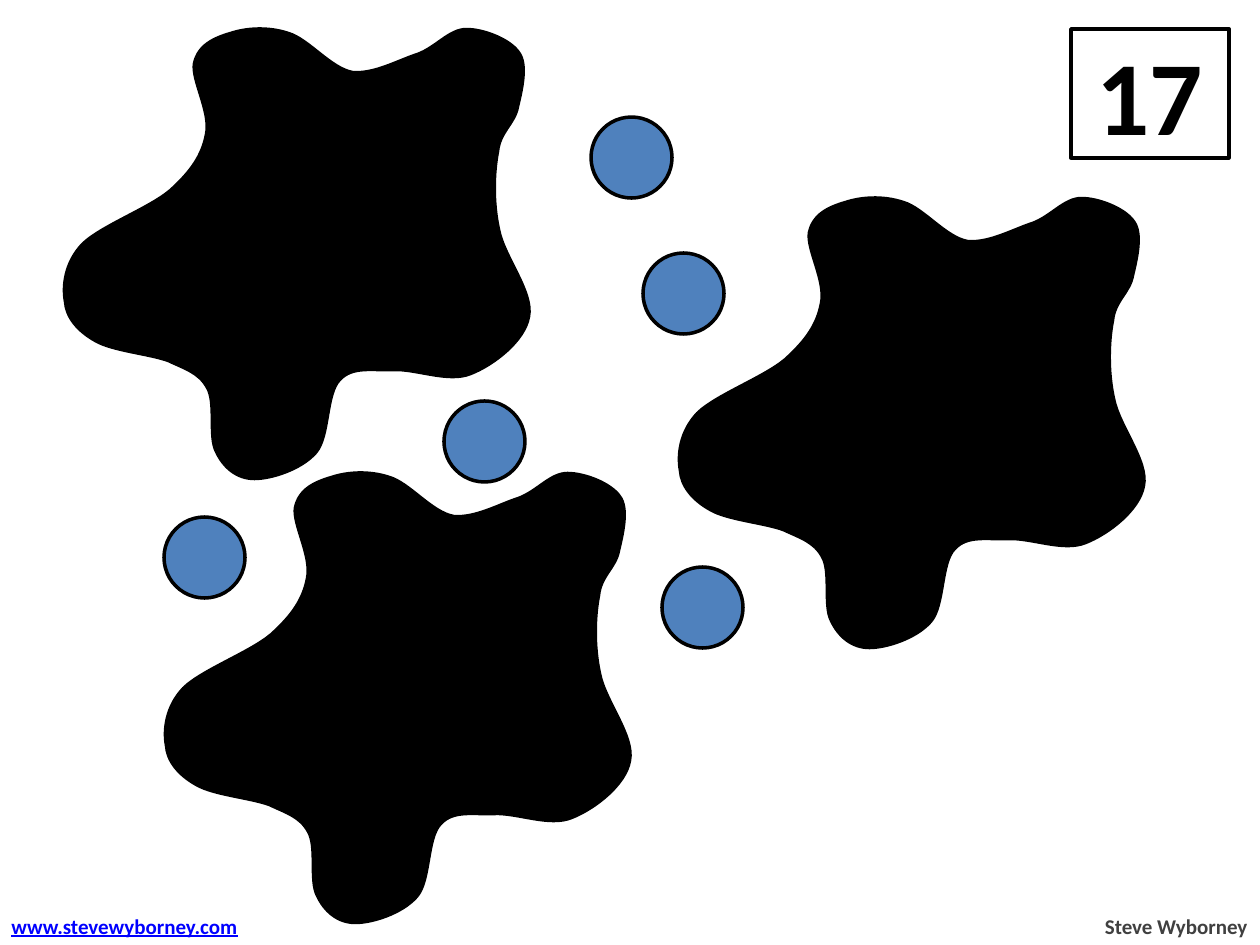
import pptx
import pptx.util
import pptx.dml.color
import pptx.enum.shapes
import pptx.enum.text
import pptx.oxml
import pptx.oxml.ns

HUE = {"ink": "000000", "paper": "FFFFFF", "dot": "4F81BD", "link": "0000FF", "name": "404040"}
UNIT = 7257
SIZE = 1260, 945
DOT = 81

ALIGN = pptx.enum.text.PP_ALIGN
KIND = pptx.enum.shapes.MSO_SHAPE

COUNT = ("17", (1071, 29, 158, 129), ALIGN.CENTER, "ink", {"size": pptx.util.Pt(60), "bold": True})
SMALL = {"size": pptx.util.Pt(12), "bold": True}
NOTES = [
    ("Steve Wyborney", (1091, 907, 169, 38), ALIGN.RIGHT, "name", SMALL),
    ("www.stevewyborney.com", (-1, 907, 258, 38), ALIGN.LEFT, "link", {**SMALL, "underline": True}),
]
DOTS = [
    (229, 173), (343, 517), (407, 253), (643, 253), (229, 354), (725, 401),
    (164, 517), (528, 494), (444, 401), (662, 567), (229, 685), (422, 53),
    (878, 360), (490, 670), (591, 117), (834, 236), (851, 534),
]
SHIFTS = [(101, 444), (615, 169), (0, 0)]
START = (96, 340)
CURVES = [
    (78, 330), (67, 316), (66, 301),
    (63, 285), (66, 262), (83, 244),
    (101, 226), (150, 208), (171, 190),
    (192, 171), (203, 155), (207, 134),
    (212, 112), (192, 79), (195, 63),
    (199, 45), (214, 38), (231, 33),
    (246, 28), (268, 26), (289, 33),
    (309, 39), (331, 68), (353, 72),
    (375, 74), (399, 60), (418, 54),
    (437, 47), (450, 29), (467, 29),
    (484, 29), (510, 39), (519, 52),
    (528, 64), (522, 89), (518, 106),
    (515, 123), (500, 131), (498, 151),
    (494, 171), (493, 202), (499, 229),
    (504, 256), (534, 292), (529, 316),
    (525, 340), (494, 364), (471, 373),
    (449, 382), (417, 368), (394, 369),
    (373, 370), (353, 365), (340, 379),
    (326, 393), (330, 436), (316, 452),
    (301, 469), (271, 478), (255, 478),
    (237, 478), (224, 466), (217, 451),
    (209, 436), (217, 402), (208, 387),
    (200, 372), (186, 368), (169, 360),
    (150, 353), (113, 350), START,
]


def emu(nums):
    return [n * UNIT for n in nums]


def tint(name):
    return pptx.dml.color.RGBColor.from_string(HUE[name])


def paint(shape, fill):
    shape.shadow.inherit = False
    shape.fill.solid()
    shape.fill.fore_color.rgb = tint(fill)
    shape.line.color.rgb = tint("ink")
    shape.line.width = pptx.util.Pt(2)


def write(shape, text, align, hue, style):
    para = shape.text_frame.paragraphs[0]
    para.alignment = align
    run = para.add_run()
    run.text = text
    run.font.name = "Calibri"
    run.font.color.rgb = tint(hue)
    for key, val in style.items():
        setattr(run.font, key, val)


def bend(shape):
    qn = pptx.oxml.ns.qn
    lines = list(shape.element.iter(qn("a:lnTo")))
    for i in range(0, len(lines), 3):
        trio = lines[i:i + 3]
        curve = pptx.oxml.parse_xml("<a:cubicBezTo %s/>" % pptx.oxml.ns.nsdecls("a"))
        trio[0].addprevious(curve)
        for line in trio:
            curve.append(line[0])
            line.getparent().remove(line)


def turn(x, y):
    mid_x, mid_y = 298, 252
    return mid_x + mid_y - y, mid_y - mid_x + x


def blot(shapes, shift):
    pen = shapes.build_freeform(*turn(*START), scale=UNIT)
    pen.add_line_segments([turn(*p) for p in CURVES], close=True)
    shape = pen.convert_to_shape(*emu(shift))
    bend(shape)
    shape.rotation = 270
    paint(shape, "ink")


def main():
    deck = pptx.Presentation()
    deck.slide_width, deck.slide_height = emu(SIZE)
    shapes = deck.slides.add_slide(deck.slide_layouts[6]).shapes

    text, box, *look = COUNT
    card = shapes.add_shape(KIND.RECTANGLE, *emu(box))
    paint(card, "paper")
    card.text_frame.vertical_anchor = pptx.enum.text.MSO_ANCHOR.MIDDLE
    write(card, text, *look)

    for text, box, *look in NOTES:
        note = shapes.add_textbox(*emu(box))
        note.text_frame.word_wrap = False
        note.text_frame.auto_size = pptx.enum.text.MSO_AUTO_SIZE.SHAPE_TO_FIT_TEXT
        write(note, text, *look)

    for spot in DOTS:
        paint(shapes.add_shape(KIND.OVAL, *emu((*spot, DOT, DOT))), "dot")
    for shift in SHIFTS:
        blot(shapes, shift)
    deck.save("out.pptx")


if __name__ == "__main__":
    main()
